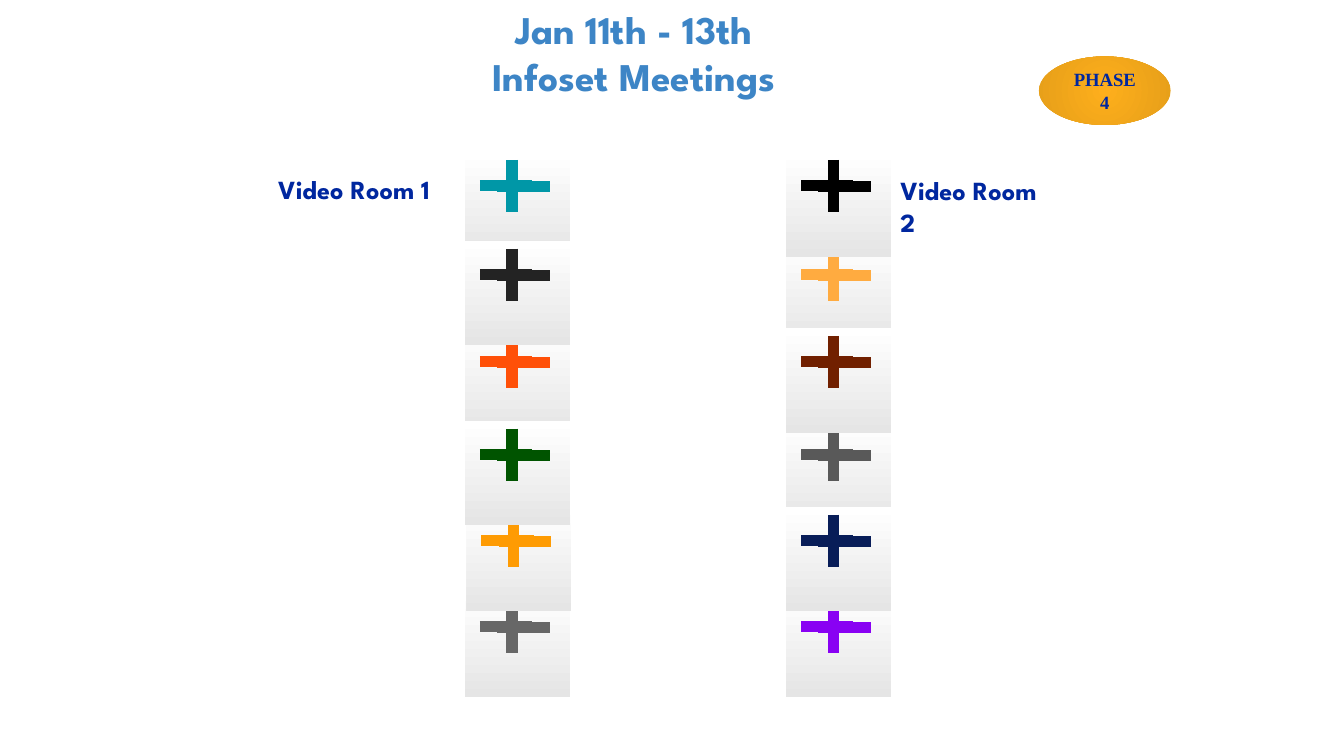
from lxml import etree
from pptx import Presentation
from pptx.dml.color import RGBColor
from pptx.enum.shapes import MSO_CONNECTOR as Connector, MSO_SHAPE as Shape
from pptx.enum.text import MSO_ANCHOR as Anchor, MSO_AUTO_SIZE as AutoSize, PP_ALIGN as Align
from pptx.oxml.ns import qn
from pptx.util import Inches, Pt

TITLE = ["Jan 11th - 13th", "Infoset Meetings"]
ROOMS = [("Video Room 1", (2, 1.25, 1.92, 0.31)),
         ("Video Room 2", (6.63, 1.26, 1.3, 0.3))]
PHASE = "PHASE 4"

# Room, row and colour of each marker, from back to front
MARKERS = [
    (0, 0, "0097A7"), (1, 1, "FFAB40"), (1, 0, "000000"), (0, 2, "FF5008"),
    (1, 5, "8901F3"), (0, 5, "676767"), (0, 1, "232323"), (1, 3, "595959"),
    (1, 4, "081D58"), (1, 2, "712000"), (0, 4, "FE9B03"), (0, 3, "005400"),
]
COLUMNS = [3.46, 5.85]
ROWS = [1.13, 1.79, 2.44, 3.13, 3.77, 4.41]
NUDGES = {(0, 4): 0.01}
TILE = 0.78
# Strokes of a cross, as start and end measured from the tile's corner
ARMS = [((0.35, 0.06), (0.35, 0.45)),
        ((0.63, 0.26), (0.24, 0.26)),
        ((0.11, 0.25), (0.50, 0.25))]

THEME = {
    "title": {"name": "League Spartan", "size": Pt(21), "color": "3D85C6", "bold": True},
    "room": {"name": "League Spartan", "size": Pt(14), "color": "00279F", "bold": True},
    "phase": {"name": "Times New Roman", "size": Pt(10), "color": "00279F", "bold": True},
    "tile": ("FFFFFF", "E5E5E5"),
    "badge": ("FEAF1C", "E59E19"),
    "stroke": Pt(6),
}


def write(box, lines, style, align=Align.LEFT, anchor=Anchor.TOP, inset=0.04):
    frame = box.text_frame
    settings = {
        "word_wrap": True, "auto_size": AutoSize.NONE, "vertical_anchor": anchor,
        "margin_left": Inches(0.07), "margin_right": Inches(0.07),
        "margin_top": Inches(inset), "margin_bottom": Inches(inset),
    }
    for name, value in settings.items():
        setattr(frame, name, value)
    frame.text = "\n".join(lines)
    for para in frame.paragraphs:
        para.alignment = align
        for span in para.runs:
            for name, value in THEME[style].items():
                if name == "color":
                    span.font.color.rgb = RGBColor.from_string(value)
                else:
                    setattr(span.font, name, value)


def add_gradient_shape(shapes, kind, place, colors):
    shape = shapes.add_shape(kind, *map(Inches, place))
    shape.shadow.inherit = False
    shape.line.fill.background()
    shape.fill.gradient()
    shape.fill.gradient_angle = 270
    for stop, color in zip(shape.fill.gradient_stops, colors):
        stop.color.rgb = RGBColor.from_string(color)
    return shape


def make_radial(shape):
    """Turn the linear gradient into one that spreads from the centre."""
    gradient = shape._element.spPr.find(qn("a:gradFill"))
    gradient.remove(gradient.find(qn("a:lin")))
    circle = etree.SubElement(gradient, qn("a:path"), {"path": "circle"})
    etree.SubElement(circle, qn("a:fillToRect"), dict.fromkeys("ltrb", "50000"))


def add_marker(page, room, row, color):
    """Add a shaded tile with a cross on it, as one group."""
    left = COLUMNS[room] + NUDGES.get((room, row), 0)
    top = ROWS[row]
    group = page.shapes.add_group_shape()
    add_gradient_shape(group.shapes, Shape.RECTANGLE, (left, top, TILE, TILE), THEME["tile"])
    for ends in ARMS:
        points = [Inches(value) for x, y in ends for value in (left + x, top + y)]
        arm = group.shapes.add_connector(Connector.STRAIGHT, *points)
        arm.line.color.rgb = RGBColor.from_string(color)
        arm.line.width = THEME["stroke"]
        etree.SubElement(arm._element.spPr, qn("a:effectLst"))


def main():
    deck = Presentation()
    deck.slide_width, deck.slide_height = Inches(10), Inches(10 * 9 / 16)
    page = deck.slides.add_slide(deck.slide_layouts[5])

    title = page.shapes.title
    title.left, title.top, title.width, title.height = map(Inches, (3.25, 0, 2.93, 0.95))
    write(title, TITLE, "title", Align.CENTER)

    for marker in MARKERS:
        add_marker(page, *marker)

    for name, place in ROOMS:
        write(page.shapes.add_textbox(*map(Inches, place)), [name], "room")

    badge = add_gradient_shape(page.shapes, Shape.OVAL, (7.73, 0.42, 0.98, 0.51), THEME["badge"])
    make_radial(badge)
    write(badge, [PHASE], "phase", Align.CENTER, Anchor.MIDDLE, inset=0.03)

    deck.save("out.pptx")


if __name__ == "__main__":
    main()
